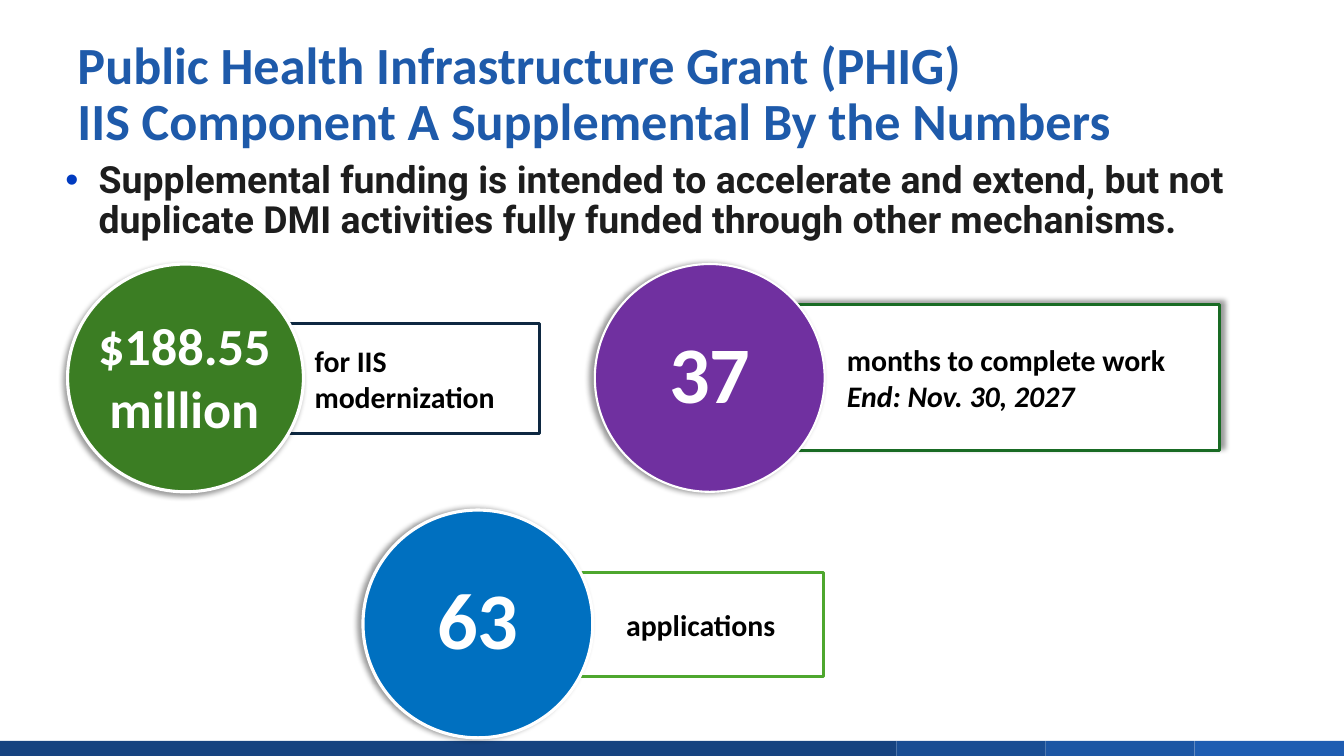
from lxml import etree
from pptx import Presentation
from pptx import util as u
from pptx.dml.color import RGBColor
from pptx.enum import shapes, text
from pptx.oxml.ns import qn

THEME = {
    "white": "FFFFFF", "black": "000000", "title": "1E5AAA", "body": "1D1D1D",
    "bullet": "003BC0", "footer": ["164380", "194D93", "1C56A4", "1E5DB2"],
    "font": "Calibri", "body_font": "Roboto",
    "title_size": 37.3, "body_size": 26.7, "label_size": 21.3, "number_size": 57.3,
}

presentation = Presentation()
presentation.slide_width = u.Inches(13.33)
presentation.slide_height = u.Inches(7.5)
slide = presentation.slides.add_slide(presentation.slide_layouts[6])


def add_box(area, kind=None, fill=None, line=None, width=2.25, shadow=None):
    """Add a shape, or a text box without kind; area is in percent of the slide."""
    left, top, wide, high = area
    place = [int(presentation.slide_width * left / 100),
             int(presentation.slide_height * top / 100),
             int(presentation.slide_width * wide / 100),
             int(presentation.slide_height * high / 100)]
    if kind is None:
        shape = slide.shapes.add_textbox(*place)
    else:
        shape = slide.shapes.add_shape(kind, *place)
        shape.shadow.inherit = False
        shape.fill.solid()
        shape.fill.fore_color.rgb = RGBColor.from_string(fill)
        if line:
            shape.line.color.rgb = RGBColor.from_string(line)
            shape.line.width = u.Pt(width)
        else:
            shape.line.fill.background()
    if shadow is not None:
        effects = shape.element.spPr.find(qn("a:effectLst"))
        outer = etree.SubElement(effects, qn("a:outerShdw"), blurRad=str(u.Pt(4)),
                                 dist=str(u.Pt(3)), dir=str(shadow * 60000),
                                 rotWithShape="0")
        color = etree.SubElement(outer, qn("a:srgbClr"), val=THEME["black"])
        etree.SubElement(color, qn("a:alpha"), val="40000")
    shape.text_frame.word_wrap = True
    return shape


def add_text(shape, lines, size, color, align=text.PP_ALIGN.LEFT, indent=0,
             spacing=None, font=THEME["font"]):
    """Write bold paragraphs; each line is a text and whether it is italic."""
    frame = shape.text_frame
    for index, (words, italic) in enumerate(lines):
        paragraph = frame.add_paragraph() if index else frame.paragraphs[0]
        paragraph.alignment = align
        if spacing:
            paragraph.line_spacing = spacing
        if indent:
            paragraph._p.get_or_add_pPr().set("marL", str(u.Inches(indent)))
        for part_index, part in enumerate(words.split("\n")):
            if part_index:
                paragraph.add_line_break()
            run = paragraph.add_run()
            run.text = part
            run.font.name = font
            run.font.size = u.Pt(size)
            run.font.bold = True
            run.font.italic = italic
            run.font.color.rgb = RGBColor.from_string(color)
    return frame


RECTANGLE = shapes.MSO_SHAPE.RECTANGLE
OVAL = shapes.MSO_SHAPE.OVAL
CENTER = text.PP_ALIGN.CENTER
MIDDLE = text.MSO_ANCHOR.MIDDLE

# Footer band: one long bar, then three equal steps
STEP = 11.1
FIRST_STEP = 100 - 3 * STEP
for index, color in enumerate(THEME["footer"]):
    left = FIRST_STEP + (index - 1) * STEP if index else 0
    add_box((left, 98, STEP if index else FIRST_STEP, 2), RECTANGLE, color)

# Title
title = add_box((5.03, 4, 90, 16.67))
frame = add_text(title, [("Public Health Infrastructure Grant (PHIG)\n"
                          "IIS Component A Supplemental By the Numbers", False)],
                 THEME["title_size"], THEME["title"], spacing=u.Pt(40))
frame.vertical_anchor = text.MSO_ANCHOR.BOTTOM

# Bulleted statement
body = add_box((4.13, 20.67, 90, 64.53))
frame = add_text(body, [("Supplemental funding is intended to accelerate and extend, but not "
                         "duplicate DMI activities fully funded through other mechanisms.", False)],
                 THEME["body_size"], THEME["body"], indent=0.33, spacing=0.9,
                 font=THEME["body_font"])
frame.paragraphs[0].space_before = u.Pt(10)
properties = frame.paragraphs[0]._p.get_or_add_pPr()
properties.set("indent", str(-u.Inches(0.33)))
bullet_color = etree.SubElement(properties, qn("a:buClr"))
etree.SubElement(bullet_color, qn("a:srgbClr"), val=THEME["bullet"])
etree.SubElement(properties, qn("a:buFont"), typeface="Arial")
etree.SubElement(properties, qn("a:buChar"), char="•")

# Figures: each circle overlaps the left end of its caption box
FIGURES = [
    dict(box=(59.04, 40.27, 31.73, 19.33), outline="196B24", box_shadow=315,
         caption=[("months to complete work", False), ("End: Nov. 30, 2027", True)],
         indent=0.4, align=text.PP_ALIGN.LEFT,
         circle=(44.26, 34.93, 17.1, 30.13), fill="7030A0", ring=1.5,
         circle_shadow=180, number="37"),
    dict(box=(42.01, 75.73, 19.28, 13.73), outline="4EA72E", box_shadow=None,
         caption=[("applications", False)], indent=0.13, align=CENTER,
         circle=(27.01, 67.47, 17.1, 30.13), fill="0070C0", ring=2.25,
         circle_shadow=180, number="63"),
    dict(box=(20.56, 42.8, 19.58, 14.53), outline="0E2841", box_shadow=None,
         caption=[("for IIS modernization", False)], indent=0.25,
         align=text.PP_ALIGN.LEFT,
         circle=(5.03, 34.93, 17.55, 30.13), fill="3B7D23", ring=2.25,
         circle_shadow=135, number=None),
]
for figure in FIGURES:
    box = add_box(figure["box"], RECTANGLE, THEME["white"], figure["outline"],
                  shadow=figure["box_shadow"])
    frame = add_text(box, figure["caption"], THEME["label_size"], THEME["black"],
                     figure["align"], figure["indent"])
    frame.vertical_anchor = MIDDLE
    frame.margin_left = frame.margin_right = u.Inches(0.13)
    circle = add_box(figure["circle"], OVAL, figure["fill"], THEME["white"],
                     figure["ring"], figure["circle_shadow"])
    if figure["number"]:
        frame = add_text(circle, [(figure["number"], False)], THEME["number_size"],
                         THEME["white"], CENTER, spacing=0.9)
        frame.vertical_anchor = MIDDLE

# Amount over the green circle
amount = add_box((5.4, 40.8, 16.65, 18.13))
add_text(amount, [("$188.55", False), ("million", False)],
         THEME["title_size"], THEME["white"], CENTER)

presentation.save("out.pptx")
